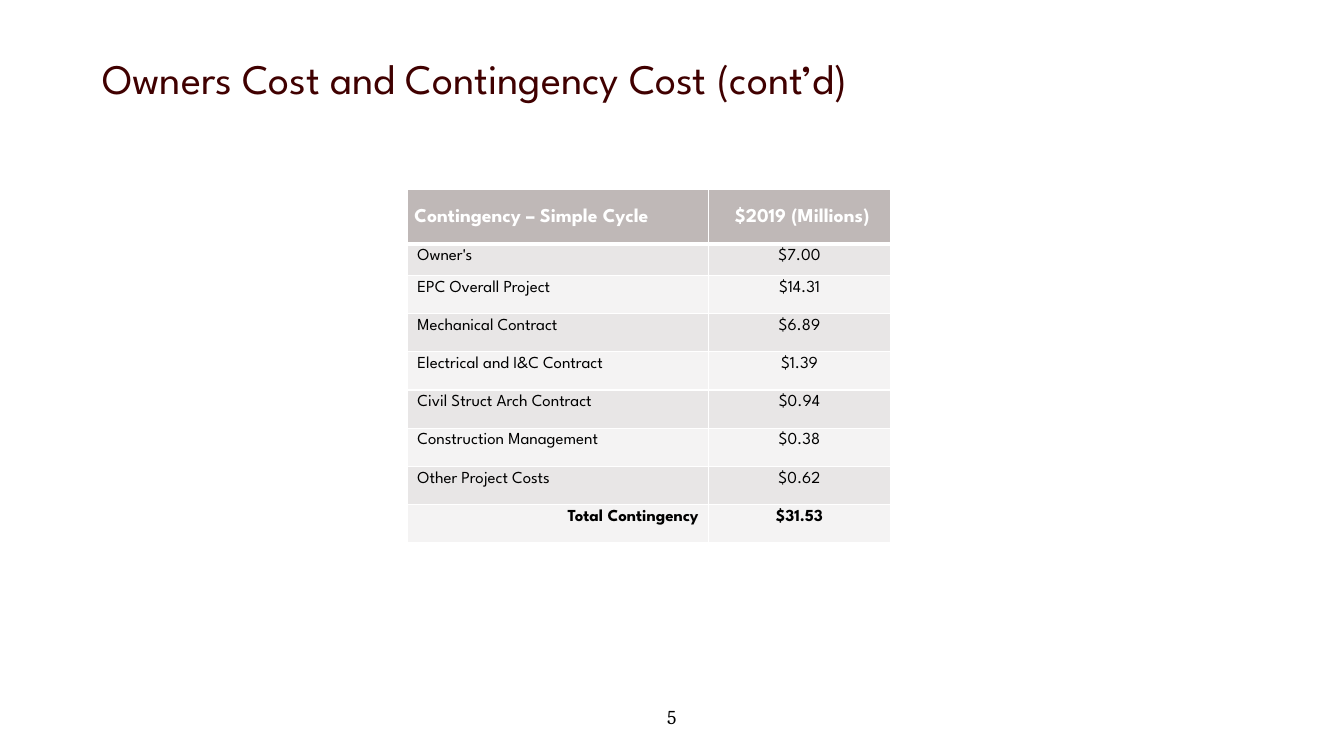
from lxml.etree import SubElement
from pptx import Presentation
from pptx.dml.color import RGBColor
from pptx.enum.text import MSO_ANCHOR as Anchor, PP_ALIGN as Align
from pptx.oxml.ns import qn
from pptx.util import Pt

MAROON = RGBColor(0x40, 0x00, 0x00)
BLACK = RGBColor(0x00, 0x00, 0x00)
WHITE = RGBColor(0xFF, 0xFF, 0xFF)
HEADER_FILL = RGBColor(0xBF, 0xB8, 0xB7)
BAND_FILLS = (RGBColor(0xE8, 0xE6, 0xE6), RGBColor(0xF4, 0xF3, 0xF3))

BODY_FONT = "League Spartan"
NUMBER_FONT = "Cambria"

HEADER = ("Contingency – Simple Cycle", "$2019 (Millions)")
COSTS = (
    ("Owner's", "$7.00"),
    ("EPC Overall Project", "$14.31"),
    ("Mechanical Contract", "$6.89"),
    ("Electrical and I&C Contract", "$1.39"),
    ("Civil Struct Arch Contract", "$0.94"),
    ("Construction Management", "$0.38"),
    ("Other Project Costs", "$0.62"),
    ("Total Contingency", "$31.53"),
)
COLUMN_WIDTHS = (215.3, 129.6)
ROW_HEIGHTS = (38.9, 22.3) + (27.3,) * (len(COSTS) - 1)


def write_text(text_frame, text, size, color, font_name=BODY_FONT,
               bold=False, align=Align.LEFT, line_spacing=1.0):
    text_frame.text = text
    paragraph = text_frame.paragraphs[0]
    paragraph.alignment = align
    paragraph.line_spacing = line_spacing
    font = paragraph.runs[0].font
    font.name = font_name
    font.size = Pt(size)
    font.bold = bold
    font.color.rgb = color


def add_text(slide, left, top, width, height, text, size, color, **style):
    box = slide.shapes.add_textbox(Pt(left), Pt(top), Pt(width), Pt(height))
    text_frame = box.text_frame
    text_frame.word_wrap = True
    write_text(text_frame, text, size, color, line_spacing=0.9, **style)
    return text_frame


def set_borders(cell, bottom_width):
    properties = cell._tc.get_or_add_tcPr()
    widths = {"a:lnL": 1, "a:lnR": 1, "a:lnT": 1, "a:lnB": bottom_width}
    for tag, width in widths.items():
        line = SubElement(properties, qn(tag), w=str(Pt(width)))
        fill = SubElement(line, qn("a:solidFill"))
        SubElement(fill, qn("a:srgbClr"), val=str(WHITE))


def fill_cell(cell, fill_color, bottom_width=1):
    # Borders come before the fill in the cell properties
    set_borders(cell, bottom_width)
    cell.fill.solid()
    cell.fill.fore_color.rgb = fill_color


def add_cost_table(slide, left, top):
    frame = slide.shapes.add_table(
        len(ROW_HEIGHTS), len(COLUMN_WIDTHS), Pt(left), Pt(top),
        Pt(sum(COLUMN_WIDTHS)), Pt(sum(ROW_HEIGHTS)))
    table = frame.table
    for column, width in zip(table.columns, COLUMN_WIDTHS):
        column.width = Pt(width)
    for row, height in zip(table.rows, ROW_HEIGHTS):
        row.height = Pt(height)

    # Header row
    header_styles = ((Align.LEFT, 5), (Align.CENTER, 9))
    for index, (text, (align, margin)) in enumerate(zip(HEADER, header_styles)):
        cell = table.cell(0, index)
        cell.vertical_anchor = Anchor.MIDDLE
        cell.margin_left, cell.margin_right = Pt(margin), Pt(5)
        cell.margin_top = cell.margin_bottom = Pt(0)
        write_text(cell.text_frame, text, 14, WHITE, bold=True,
                   align=align, line_spacing=1.07)
        fill_cell(cell, HEADER_FILL, bottom_width=3)

    # Cost rows in alternating bands, with the total last
    for row_index, costs in enumerate(COSTS, start=1):
        is_total = row_index == len(COSTS)
        aligns = (Align.RIGHT if is_total else Align.LEFT, Align.CENTER)
        for column_index, (text, align) in enumerate(zip(costs, aligns)):
            cell = table.cell(row_index, column_index)
            write_text(cell.text_frame, text, 12, BLACK,
                       bold=is_total, align=align)
            fill_cell(cell, BAND_FILLS[(row_index - 1) % 2])


def main():
    presentation = Presentation()
    presentation.slide_width = Pt(960)
    presentation.slide_height = Pt(540)
    slide = presentation.slides.add_slide(presentation.slide_layouts[6])

    # Slide number
    add_text(slide, 384.5, 501.8, 190.8, 31, "5", 14, BLACK,
             font_name=NUMBER_FONT, align=Align.CENTER)

    # Title
    title = add_text(slide, 66, 18.7, 828, 78.5,
                     "Owners Cost and Contingency Cost (cont’d)", 30, MAROON)
    title.vertical_anchor = Anchor.MIDDLE

    # Contingency costs
    add_cost_table(slide, 291, 135.5)

    presentation.save("out.pptx")


if __name__ == "__main__":
    main()
